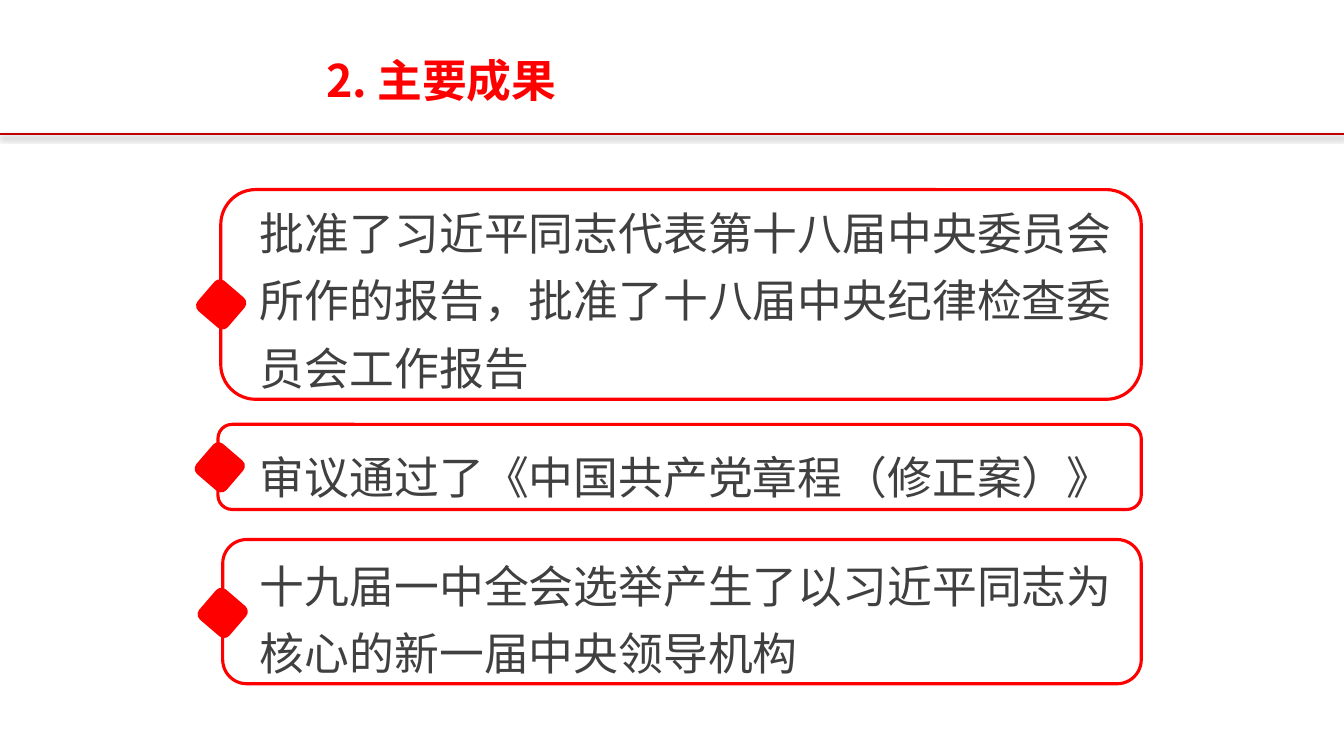
from lxml import etree
from pptx import Presentation
from pptx.dml.color import RGBColor
from pptx.enum import shapes, text
from pptx.oxml import ns
from pptx.util import Pt

# Content
TITLE = "2. 主要成果"
RESULTS = [
    "批准了习近平同志代表第十八届中央委员会所作的报告，批准了十八届中央纪律检查委员会工作报告",
    "审议通过了《中国共产党章程（修正案）》",
    "十九届一中全会选举产生了以习近平同志为核心的新一届中央领导机构",
]
# Frame left, top, height, then marker centre across and down
FRAMES = [
    (157.7, 135.4, 149.8, 158, 217.4),
    (155.7, 303.1, 60.8, 157, 333.8),
    (159.1, 385.4, 103, 159.1, 437.8),
]

# Format
FONT = "Noto Sans CJK SC"
RED = RGBColor(0xFF, 0x00, 0x00)
DARK_RED = RGBColor(0xC0, 0x00, 0x00)
GREY = RGBColor(0x40, 0x40, 0x40)
WHITE = RGBColor(0xFF, 0xFF, 0xFF)
WIDTH, HEIGHT = 960, 540
FRAME_RIGHT = 815.2
MARKER = 27.4
RULE_TOP = 95.8
LINE_PITCH = 48
GAP = 15


def add_round_box(page, left, top, width, height, fill, weight):
    box = page.shapes.add_shape(
        shapes.MSO_SHAPE.ROUNDED_RECTANGLE, Pt(left), Pt(top), Pt(width), Pt(height))
    box.shadow.inherit = False
    box.fill.solid()
    box.fill.fore_color.rgb = fill
    box.line.color.rgb = RED
    box.line.width = Pt(weight)
    return box


def add_text(page, place, lines, color, para_format, bold=False):
    box = page.shapes.add_textbox(*map(Pt, place))
    frame = box.text_frame
    frame.word_wrap = True
    for index, line in enumerate(lines):
        para = frame.add_paragraph() if index else frame.paragraphs[0]
        for name, value in para_format.items():
            setattr(para, name, value)
        if index == 0:
            para.space_before = Pt(0)
        span = para.add_run()
        span.text = line
        for name, value in {"name": FONT, "size": Pt(32), "bold": bold}.items():
            setattr(span.font, name, value)
        span.font.color.rgb = color
        east_asian = etree.SubElement(span.font._element, ns.qn("a:ea"))
        east_asian.set("typeface", FONT)


deck = Presentation()
deck.slide_width, deck.slide_height = Pt(WIDTH), Pt(HEIGHT)
page = deck.slides.add_slide(deck.slide_layouts[6])

# Header rule with a soft shadow below
rule = page.shapes.add_connector(
    shapes.MSO_CONNECTOR.STRAIGHT, Pt(0), Pt(RULE_TOP), Pt(WIDTH), Pt(RULE_TOP))
rule.line.color.rgb = DARK_RED
rule.line.width = Pt(1.5)
effects = etree.SubElement(rule._element.spPr, ns.qn("a:effectLst"))
shadow = etree.SubElement(effects, ns.qn("a:outerShdw"), blurRad=str(Pt(4)),
                          dist=str(Pt(2)), dir="5400000", algn="t", rotWithShape="0")
shade = etree.SubElement(shadow, ns.qn("a:srgbClr"), val="000000")
etree.SubElement(shade, ns.qn("a:alpha"), val="40000")

# Frames, each with a turned marker on its left edge
for left, top, height, across, down in FRAMES:
    frame = add_round_box(page, left, top, FRAME_RIGHT - left, height, WHITE, 2.25)
    color = frame._element.spPr.find(ns.qn("a:solidFill"))[0]
    etree.SubElement(color, ns.qn("a:alpha"), val="50000")
    marker = add_round_box(page, across - MARKER / 2, down - MARKER / 2,
                           MARKER, MARKER, RED, 1)
    marker.rotation = 40.7

# Text
add_text(page, (178.6, 133.9, 635, 358.6), RESULTS, GREY,
         {"line_spacing": Pt(LINE_PITCH), "space_before": Pt(GAP), "space_after": Pt(GAP)})
add_text(page, (133.9, 24.5, 362.9, 55.4), [TITLE], RED,
         {"line_spacing": Pt(LINE_PITCH), "alignment": text.PP_ALIGN.CENTER}, bold=True)

deck.save("out.pptx")
